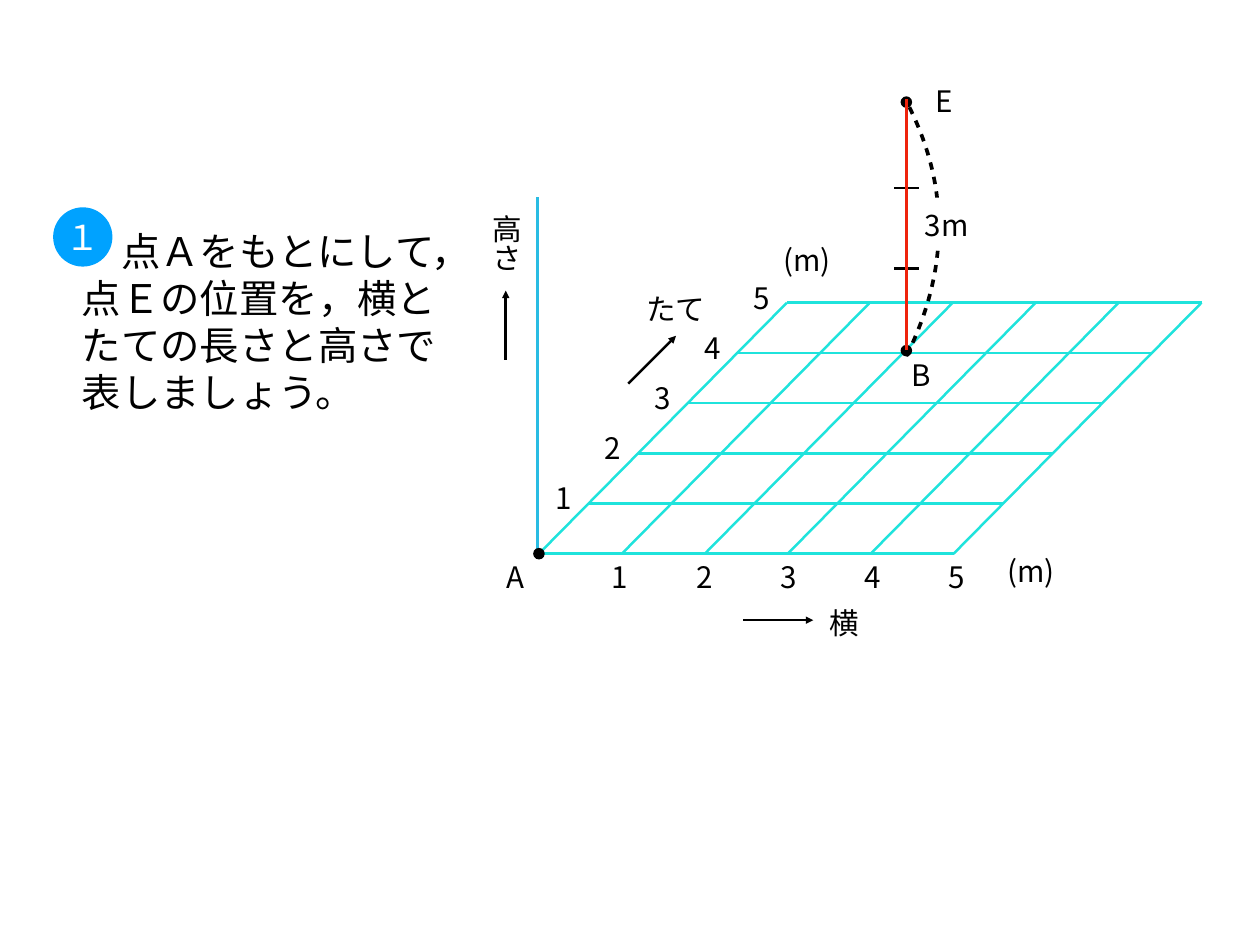
from dataclasses import dataclass

import lxml.etree
import pptx
import pptx.dml.color
import pptx.enum.shapes
import pptx.enum.text
import pptx.oxml.ns
import pptx.util

Pt = pptx.util.Pt
RGBColor = pptx.dml.color.RGBColor
Align = pptx.enum.text.PP_ALIGN
Shape = pptx.enum.shapes.MSO_SHAPE

BLACK = RGBColor(0x00, 0x00, 0x00)
WHITE = RGBColor(0xFF, 0xFF, 0xFF)
GRID_CYAN = RGBColor(0x1F, 0xE3, 0xDC)
HEIGHT_BLUE = RGBColor(0x29, 0xBC, 0xE3)
BADGE_BLUE = RGBColor(0x00, 0xA2, 0xFF)
RED = RGBColor(0xEE, 0x23, 0x0C)
FONT = "Noto Sans CJK JP"

# Floor grid: corner A, step along the width, step along the depth
CELLS = 5
A_X, A_Y = 438, 450
WIDTH_STEP = 67.4
DEPTH_X, DEPTH_Y = 40.3, -40.8
POLE_X = 736.6


@dataclass(frozen=True)
class Segment:
    x1: float
    y1: float
    x2: float
    y2: float
    color: RGBColor = BLACK
    arrow: bool = False


@dataclass(frozen=True)
class Label:
    text: str
    x: float
    y: float
    width: float = 26
    height: float = 43
    vertical: bool = False
    fill: RGBColor | None = None


def add_child(parent, tag: str, **attributes: str):
    return lxml.etree.SubElement(parent, pptx.oxml.ns.qn(tag), attributes)


def draw_segment(shapes, segment: Segment) -> None:
    line = shapes.add_connector(
        pptx.enum.shapes.MSO_CONNECTOR.STRAIGHT,
        Pt(segment.x1), Pt(segment.y1), Pt(segment.x2), Pt(segment.y2))
    line.line.color.rgb = segment.color
    line.line.width = Pt(2)
    if segment.arrow:
        add_child(line.line._get_or_add_ln(), "a:tailEnd", type="triangle")
    add_child(line._element.spPr, "a:effectLst")


def write_text(box, lines: list[str], size: float, color: RGBColor,
               align: Align, wrap: bool, spacing: float | None = None) -> None:
    frame = box.text_frame
    frame.word_wrap = wrap
    frame.auto_size = pptx.enum.text.MSO_AUTO_SIZE.NONE
    frame.vertical_anchor = pptx.enum.text.MSO_ANCHOR.MIDDLE
    frame.margin_left = frame.margin_right = Pt(4)
    frame.margin_top = frame.margin_bottom = Pt(4)
    for index, text in enumerate(lines):
        para = frame.add_paragraph() if index else frame.paragraphs[0]
        para.alignment = align
        if spacing:
            para.line_spacing = Pt(spacing)
        span = para.add_run()
        span.text = text
        span.font.size = Pt(size)
        span.font.color.rgb = color
        span.font.name = FONT
        add_child(span.font._element, "a:ea", typeface=FONT)


def draw_label(shapes, label: Label) -> None:
    box = shapes.add_textbox(
        Pt(label.x - label.width / 2), Pt(label.y - label.height / 2),
        Pt(label.width), Pt(label.height))
    write_text(box, [label.text], 24, BLACK, Align.CENTER, wrap=False)
    if label.vertical:
        box.text_frame._txBody.bodyPr.set("vert", "eaVert")
    if label.fill is not None:
        box.fill.solid()
        box.fill.fore_color.rgb = label.fill


def draw_disc(shapes, x: float, y: float, size: float, color: RGBColor):
    disc = shapes.add_shape(
        Shape.OVAL, Pt(x - size / 2), Pt(y - size / 2), Pt(size), Pt(size))
    disc.shadow.inherit = False
    disc.fill.solid()
    disc.fill.fore_color.rgb = color
    disc.line.fill.background()
    return disc


def draw_dashed_arc(shapes, controls: list[tuple[float, float]], pieces: int = 32) -> None:
    """Trace a cubic curve through short straight pieces."""
    points = []
    for index in range(pieces + 1):
        t = index / pieces
        weights = ((1 - t) ** 3, 3 * t * (1 - t) ** 2, 3 * t * t * (1 - t), t ** 3)
        points.append(tuple(
            Pt(sum(w * c[axis] for w, c in zip(weights, controls))) for axis in (0, 1)))
    builder = shapes.build_freeform(*points[0])
    builder.add_line_segments(points[1:], close=False)
    arc = builder.convert_to_shape()
    arc.shadow.inherit = False
    arc.fill.background()
    arc.line.color.rgb = BLACK
    arc.line.width = Pt(3)
    dashes = add_child(arc.line._get_or_add_ln(), "a:custDash")
    add_child(dashes, "a:ds", d="200000", sp="200000")


def main() -> None:
    deck = pptx.Presentation()
    deck.slide_width, deck.slide_height = Pt(1024), Pt(768)
    page = deck.slides.add_slide(deck.slide_layouts[6])
    shapes = page.shapes

    # Height axis and floor grid
    grid = shapes.add_group_shape().shapes
    draw_segment(grid, Segment(A_X - 1, A_Y, A_X - 1, 160, HEIGHT_BLUE))
    for step in range(CELLS + 1):
        row_x, row_y = A_X + step * DEPTH_X, A_Y + step * DEPTH_Y
        column_x = A_X + step * WIDTH_STEP
        draw_segment(grid, Segment(
            row_x, row_y, row_x + CELLS * WIDTH_STEP, row_y, GRID_CYAN))
        draw_segment(grid, Segment(
            column_x, A_Y, column_x + CELLS * DEPTH_X, A_Y + CELLS * DEPTH_Y, GRID_CYAN))

    # Points E, B and A
    for x, y in ((POLE_X, 83), (POLE_X, 285), (A_X, 450)):
        draw_disc(shapes, x, y, 9.4, BLACK)

    # Pole with metre marks and its dashed arc
    for y in (218.2, 152.6):
        draw_segment(shapes, Segment(POLE_X - 10, y, POLE_X + 10, y))
    draw_dashed_arc(shapes, [(736.6, 289.4), (771.1, 220.3), (771.8, 152.6), (738.7, 86.4)])
    draw_segment(shapes, Segment(POLE_X, 284.4, POLE_X, 80.6, RED))

    # Labels
    labels = [
        Label("たて", 549, 250.5, width=57),
        Label("横", 686.2, 506.2, width=33),
        Label("高さ", 411, 198.5, width=43, height=57, vertical=True),
        Label("A", 419, 468.7),
        Label("(m)", 655.6, 211, width=48),
        Label("(m)", 837.7, 463.7, width=48),
        Label("3m", 769.3, 182.2, width=47, fill=WHITE),
        Label("B", 748.8, 304.6),
        Label("E", 767.5, 82),
    ]
    for step in range(CELLS):
        number = str(step + 1)
        labels.append(Label(number, 504 + 68.3 * step, 468.7))
        labels.append(Label(number, 457.9 + DEPTH_X * step, 404.6 - 40.7 * step))
    for label in labels:
        draw_label(shapes, label)

    # Direction arrows
    for ends in ((510.5, 311.8, 549.4, 272.9), (411, 292.3, 411, 236.2), (604, 504, 661, 504)):
        draw_segment(shapes, Segment(*ends, arrow=True))

    # Question and its number
    question = shapes.add_textbox(Pt(62.5), Pt(169), Pt(336), Pt(184))
    write_text(question, ["　点Ａをもとにして，", "点Ｅの位置を，横と", "たての長さと高さで", "表しましょう。"],
               32, BLACK, Align.LEFT, wrap=True, spacing=38.2)
    badge = draw_disc(shapes, 67.3, 192.6, 48.2, BADGE_BLUE)
    write_text(badge, ["１"], 28, WHITE, Align.CENTER, wrap=False)

    deck.save("out.pptx")


if __name__ == "__main__":
    main()
